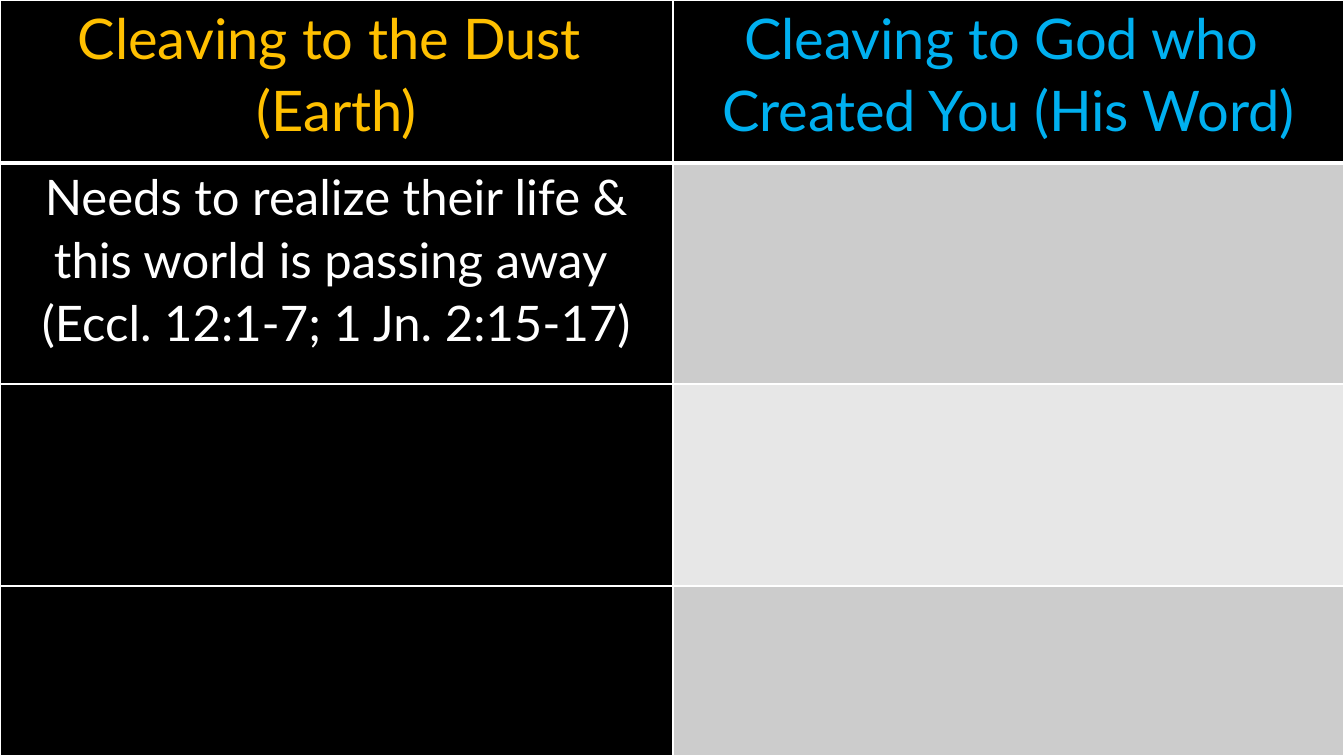
import pptx
import pptx.util
import pptx.dml.color
import pptx.enum.text
import pptx.oxml
import pptx.oxml.ns

PX = 9071.43
THEME = {
    "font": "Lato", "head": 40, "body": 35,
    "black": "000000", "white": "FFFFFF", "gold": "FFC000", "blue": "00B0F0",
    "gray": "CCCCCC", "pale": "E7E7E7",
}


def px(n):
    return pptx.util.Emu(round(n * PX))


def write(cell, text, size, color):
    frame = cell.text_frame
    frame.text = text
    for para in frame.paragraphs:
        para.alignment = pptx.enum.text.PP_ALIGN.CENTER
        para.line_spacing = 1.07
        font = para.runs[0].font
        font.name = THEME["font"]
        font.size = pptx.util.Pt(THEME[size])
        font.bold = False
        font.color.rgb = pptx.dml.color.RGBColor.from_string(THEME[color])


deck = pptx.Presentation()
deck.slide_width, deck.slide_height = px(1344), px(756)
slide = deck.slides.add_slide(deck.slide_layouts[6])
back = slide.background.fill
back.solid()
back.fore_color.rgb = pptx.dml.color.RGBColor.from_string(THEME["black"])

widths = [673, 671]
heights = [163, 221, 202, 170]
table = slide.shapes.add_table(
    len(heights), len(widths), 0, 0, px(sum(widths)), px(sum(heights))).table
for col, width in zip(table.columns, widths):
    col.width = px(width)
for row, height in zip(table.rows, heights):
    row.height = px(height)

fills = [("black", "black"), ("black", "gray"), ("black", "pale"), ("black", "gray")]
for r, row in enumerate(fills):
    for c, color in enumerate(row):
        cell = table.cell(r, c)
        cell.margin_left = cell.margin_right = px(7)
        cell.margin_top = cell.margin_bottom = 0
        props = cell._tc.get_or_add_tcPr()
        for side in "LRTB":
            thick = (r, side) in [(0, "B"), (1, "T")]
            width = pptx.util.Pt(3 if thick else 1)
            props.append(pptx.oxml.parse_xml(
                f'<a:ln{side} {pptx.oxml.ns.nsdecls("a")} w="{width}"><a:solidFill>'
                f'<a:srgbClr val="{THEME["white"]}"/></a:solidFill></a:ln{side}>'))
        cell.fill.solid()
        cell.fill.fore_color.rgb = pptx.dml.color.RGBColor.from_string(THEME[color])

write(table.cell(0, 0), "Cleaving to the Dust \n(Earth)", size="head", color="gold")
write(table.cell(0, 1), "Cleaving to God who \nCreated You (His Word)",
      size="head", color="blue")
write(table.cell(1, 0),
      "Needs to realize their life & this world is passing away \n"
      "(Eccl. 12:1-7; 1 Jn. 2:15-17)", size="body", color="white")

deck.save("out.pptx")
